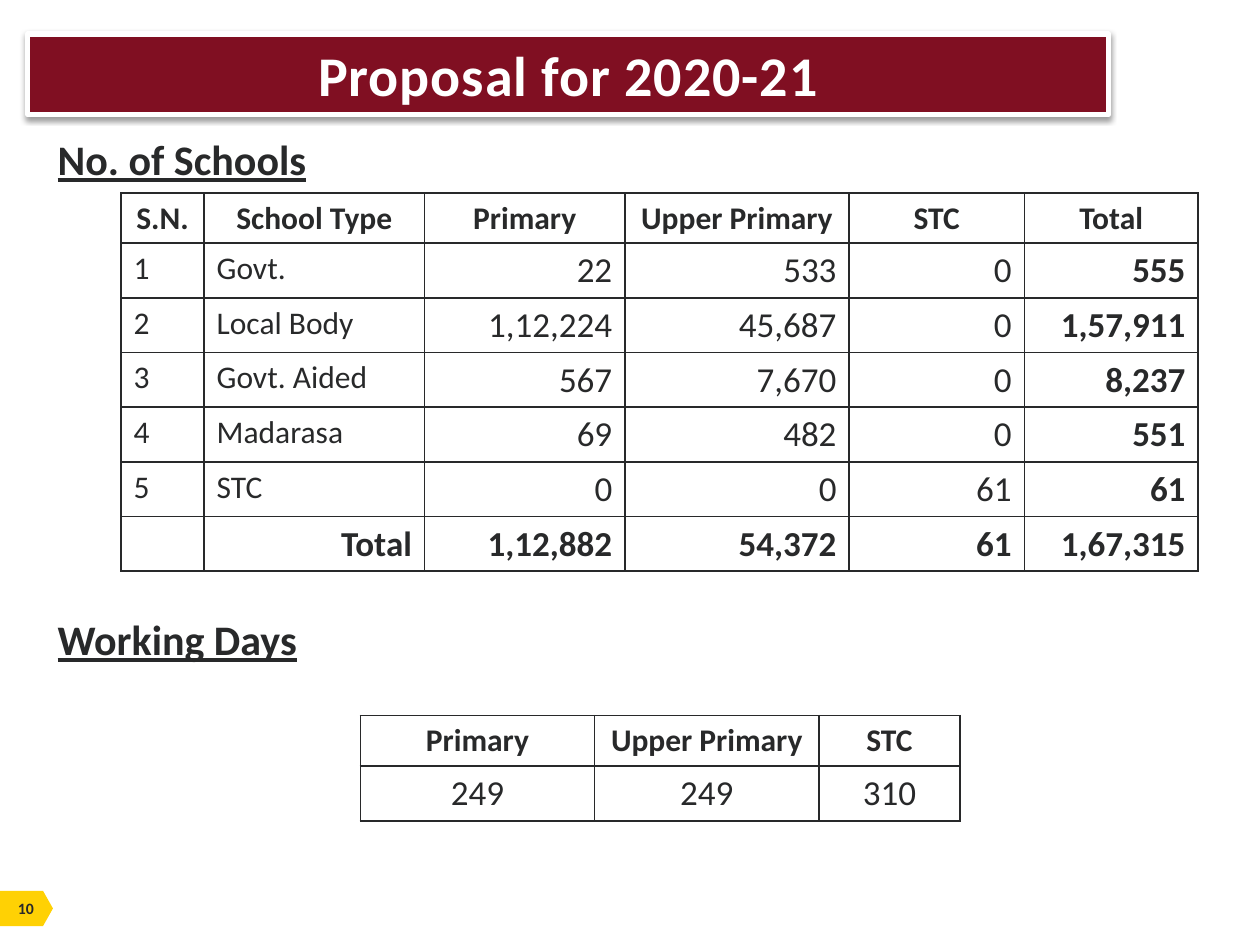
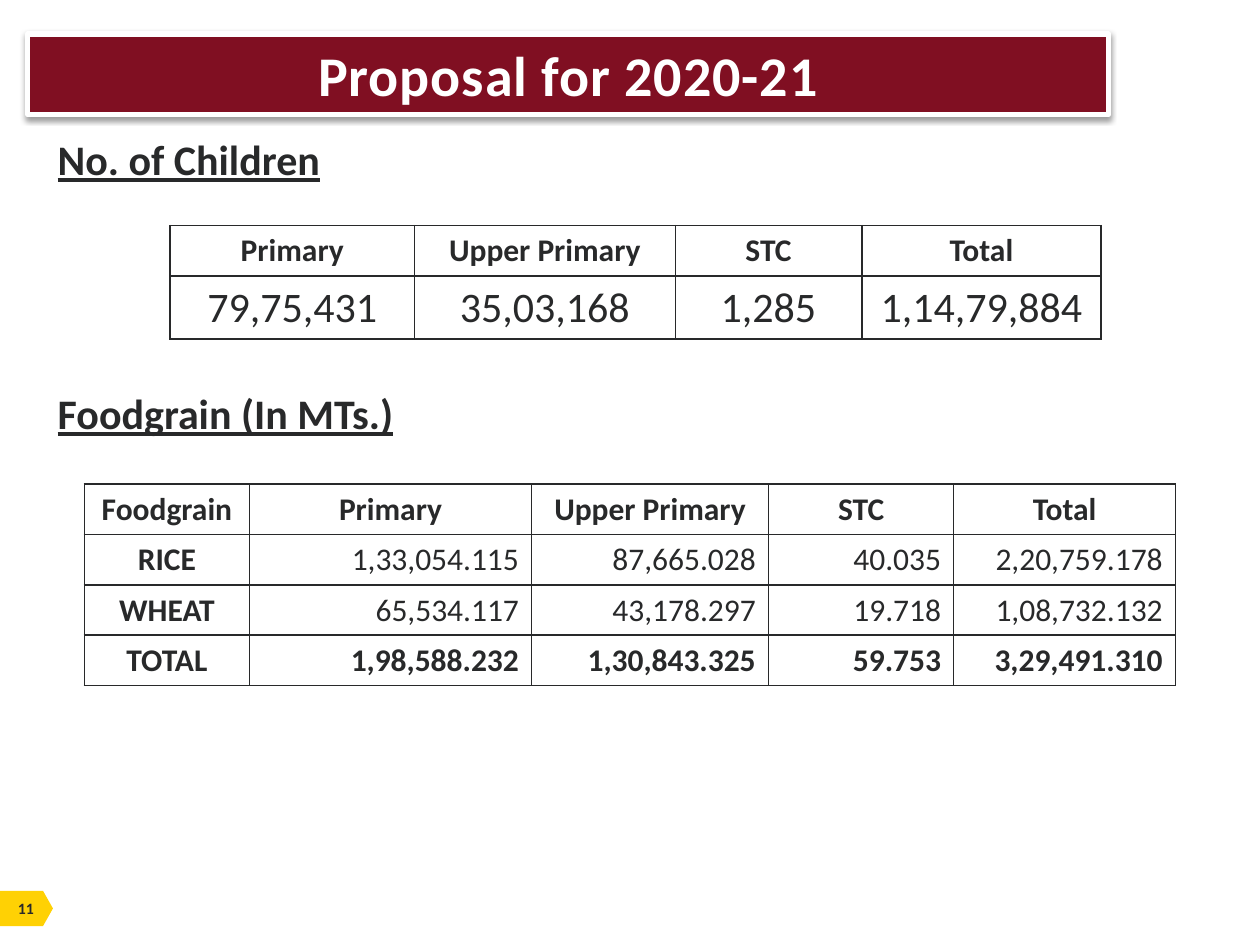
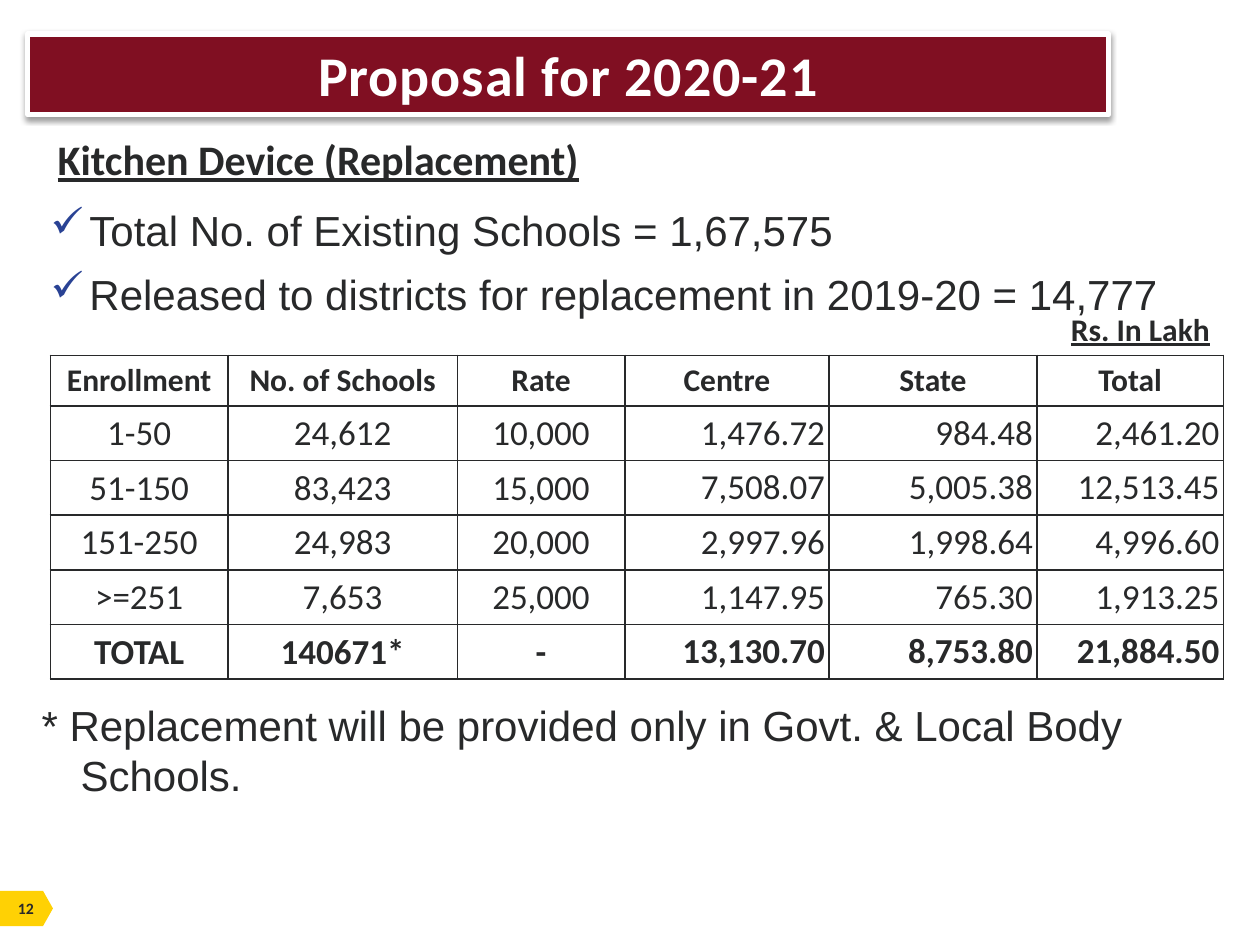
"""Build three proposal slides with school, foodgrain and kitchen device tables."""
from lxml import etree
from pptx import Presentation
from pptx import util as u
from pptx.dml.color import RGBColor
from pptx.enum import shapes, text
from pptx.oxml import parse_xml
from pptx.oxml.ns import nsdecls, qn

MAROON = RGBColor(0x80, 0x0F, 0x22)
YELLOW = RGBColor(0xFF, 0xD1, 0x04)
INK = RGBColor(0x28, 0x29, 0x2A)
BLUE = RGBColor(0x29, 0x42, 0x94)
WHITE = RGBColor(0xFF, 0xFF, 0xFF)
ALIGN = {"l": text.PP_ALIGN.LEFT, "c": text.PP_ALIGN.CENTER, "r": text.PP_ALIGN.RIGHT}
ROW_HEIGHT = {18: 0.4, 20: 0.43, 24: 0.5}
SHADOW = (
    f'<a:effectLst {nsdecls("a")}><a:outerShdw blurRad="{u.Pt(3.1)}" dist="{u.Pt(1.6)}" '
    'dir="5400000" rotWithShape="0"><a:srgbClr val="000000"><a:alpha val="38000"/>'
    '</a:srgbClr></a:outerShdw></a:effectLst>'
)


def add_text(page, area, lines, size, font="Calibri", bold=True, underline=False, inset=True, wrap=False):
    """Add a text box and return its text frame."""
    frame = page.shapes.add_textbox(*map(u.Inches, area)).text_frame
    frame.word_wrap = wrap
    if not inset:
        frame.margin_left = frame.margin_right = frame.margin_top = frame.margin_bottom = 0
    frame.text = "\n".join(lines)
    for para in frame.paragraphs:
        for span in para.runs:
            span.font.name, span.font.size = font, u.Pt(size)
            span.font.bold, span.font.underline = bold, underline
            span.font.color.rgb = INK
    return frame


def add_grid(page, left, top, widths, rows, sizes, aligns, total_aligns="", bold_columns=(), tight_columns=(), middle=False):
    """Add a bordered table with a bold heading row and an optional bold total row."""
    heights = [0.4] + [ROW_HEIGHT[sizes[-1]]] * (len(rows) - 1)
    area = (left, top, sum(widths), sum(heights))
    table = page.shapes.add_table(len(rows), len(widths), *map(u.Inches, area)).table
    table.first_row = table.horz_banding = False
    for column, width in zip(table.columns, widths):
        column.width = u.Inches(width)
    for r, values in enumerate(rows):
        table.rows[r].height = u.Inches(heights[r])
        heading = r == 0
        total = bool(total_aligns) and r == len(rows) - 1
        for c, value in enumerate(values):
            cell = table.cell(r, c)
            properties = cell._tc.get_or_add_tcPr()
            for side in ("lnL", "lnR", "lnT", "lnB"):
                border = etree.SubElement(properties, qn(f"a:{side}"), w=str(u.Pt(1)))
                solid = etree.SubElement(border, qn("a:solidFill"))
                etree.SubElement(solid, qn("a:srgbClr"), val=str(INK))
            cell.fill.background()
            if middle:
                cell.vertical_anchor = text.MSO_ANCHOR.MIDDLE
            if c in tight_columns and not heading:
                cell.margin_left = cell.margin_right = u.Inches(0.03)
                cell.margin_top = cell.margin_bottom = u.Inches(0.02)
            cell.text_frame.text = value
            para = cell.text_frame.paragraphs[0]
            para.alignment = ALIGN["c" if heading else (total_aligns if total else aligns)[c]]
            for span in para.runs:
                span.font.name = "Calibri"
                span.font.size = u.Pt(18 if heading else sizes[-1] if total else sizes[c])
                span.font.bold = heading or total or c in bold_columns
                span.font.color.rgb = INK


deck = Presentation()
deck.slide_width, deck.slide_height = u.Inches(10), u.Inches(7.5)
pages = []
for number in (10, 11, 12):
    page = deck.slides.add_slide(deck.slide_layouts[5])
    pages.append(page)

    tag = page.shapes.add_shape(shapes.MSO_SHAPE.PENTAGON, 0, u.Inches(7.07), u.Inches(0.42), u.Inches(0.28))
    tag.adjustments[0] = 0.28
    tag.shadow.inherit = False
    tag.fill.solid()
    tag.fill.fore_color.rgb = YELLOW
    tag.line.fill.background()
    frame = add_text(page, (0.13, 7.13, 0.15, 0.15), [str(number)], 9, inset=False)
    frame.vertical_anchor = text.MSO_ANCHOR.MIDDLE
    frame.paragraphs[0].alignment = ALIGN["c"]

    title = page.shapes.title
    title.left, title.top, title.width, title.height = map(u.Inches, (0.22, 0.27, 8.58, 0.64))
    title.fill.solid()
    title.fill.fore_color.rgb = MAROON
    title.line.color.rgb = WHITE
    title.line.width = u.Pt(3)
    title._element.spPr.append(parse_xml(SHADOW))
    title.text_frame.text = "Proposal for 2020-21"
    title.text_frame.auto_size = text.MSO_AUTO_SIZE.NONE
    title.text_frame.vertical_anchor = text.MSO_ANCHOR.TOP
    para = title.text_frame.paragraphs[0]
    para.alignment = ALIGN["c"]
    span = para.runs[0]
    span.font.name, span.font.size, span.font.bold = "Calibri", u.Pt(32), True
    span.font.color.rgb = WHITE
    span._r.get_or_add_rPr().set("spc", "50")

schools, children, kitchen = pages
for page, top, width, heading in (
    (schools, 1.01, 2.19, "No. of Schools"),
    (schools, 4.82, 2.12, "Working Days"),
    (children, 1.01, 2.3, "No. of Children"),
    (children, 3.03, 2.89, "Foodgrain (In MTs.)"),
    (kitchen, 1.01, 4.38, "Kitchen Device (Replacement)"),
):
    add_text(page, (0.36, top, width, 0.5), [heading], 24, underline=True)

add_grid(schools, 0.96, 1.53, [0.66, 1.75, 1.59, 1.78, 1.39, 1.38], [
    ["S.N.", "School Type", "Primary", "Upper Primary", "STC", "Total"],
    ["1", "Govt.", "22", "533", "0", "555"],
    ["2", "Local Body", "1,12,224", "45,687", "0", "1,57,911"],
    ["3", "Govt. Aided", "567", "7,670", "0", "8,237"],
    ["4", "Madarasa", "69", "482", "0", "551"],
    ["5", "STC", "0", "0", "61", "61"],
    ["", "Total", "1,12,882", "54,372", "61", "1,67,315"],
], [18, 18, 20, 20, 20, 20], "llrrrr", total_aligns="rrrrrr", bold_columns=(5,))
add_grid(schools, 2.86, 5.68, [1.86, 1.78, 1.12], [
    ["Primary", "Upper Primary", "STC"],
    ["249", "249", "310"],
], [20] * 3, "ccc")

add_grid(children, 1.35, 1.79, [1.94, 2.07, 1.48, 1.9], [
    ["Primary", "Upper Primary", "STC", "Total"],
    ["79,75,431", "35,03,168", "1,285", "1,14,79,884"],
], [24] * 4, "cccc")
add_grid(children, 0.67, 3.84, [1.31, 2.24, 1.88, 1.47, 1.76], [
    ["Foodgrain", "Primary", "Upper Primary", "STC", "Total"],
    ["RICE", "1,33,054.115", "87,665.028", "40.035", "2,20,759.178"],
    ["WHEAT", "65,534.117", "43,178.297", "19.718", "1,08,732.132"],
    ["TOTAL", "1,98,588.232", "1,30,843.325", "59.753", "3,29,491.310"],
], [18] * 5, "crrrr", total_aligns="crrrr", bold_columns=(0,))

add_grid(kitchen, 0.4, 2.82, [1.41, 1.82, 1.33, 1.62, 1.65, 1.48], [
    ["Enrollment", "No. of Schools", "Rate", "Centre", "State", "Total"],
    ["1-50", "24,612", "10,000", "1,476.72", "984.48", "2,461.20"],
    ["51-150", "83,423", "15,000", "7,508.07", "5,005.38", "12,513.45"],
    ["151-250", "24,983", "20,000", "2,997.96", "1,998.64", "4,996.60"],
    [">=251", "7,653", "25,000", "1,147.95", "765.30", "1,913.25"],
    ["TOTAL", "140671*", "-", "13,130.70", "8,753.80", "21,884.50"],
], [20] * 6, "cccrrr", total_aligns="cccrrr", tight_columns=(3, 4, 5), middle=True)
add_text(kitchen, (8.4, 2.41, 1.32, 0.4), ["Rs. In Lakh"], 18, underline=True)

facts = add_text(kitchen, (0.4, 1.62, 9.12, 0.92), [
    "Total No. of Existing Schools = 1,67,575",
    "Released to districts for replacement in 2019-20 = 14,777",
], 24, font="Arial", bold=False, inset=False, wrap=True)
footnote = add_text(kitchen, (0.33, 5.55, 9.12, 0.8), [
    "* Replacement will be provided only in Govt. & Local Body Schools.",
], 24, font="Arial", bold=False, inset=False, wrap=True)
for para in (*facts.paragraphs, *footnote.paragraphs):
    properties = para._p.get_or_add_pPr()
    properties.set("marL", str(u.Inches(0.31)))
    properties.set("indent", str(u.Inches(-0.31)))
for para in facts.paragraphs:
    properties = para._p.get_or_add_pPr()
    color = etree.SubElement(properties, qn("a:buClr"))
    etree.SubElement(color, qn("a:srgbClr"), val=str(BLUE))
    etree.SubElement(properties, qn("a:buFont"), typeface="Wingdings")
    etree.SubElement(properties, qn("a:buChar"), char="ü")
facts.paragraphs[1].space_before = u.Pt(8)

deck.save("out.pptx")
